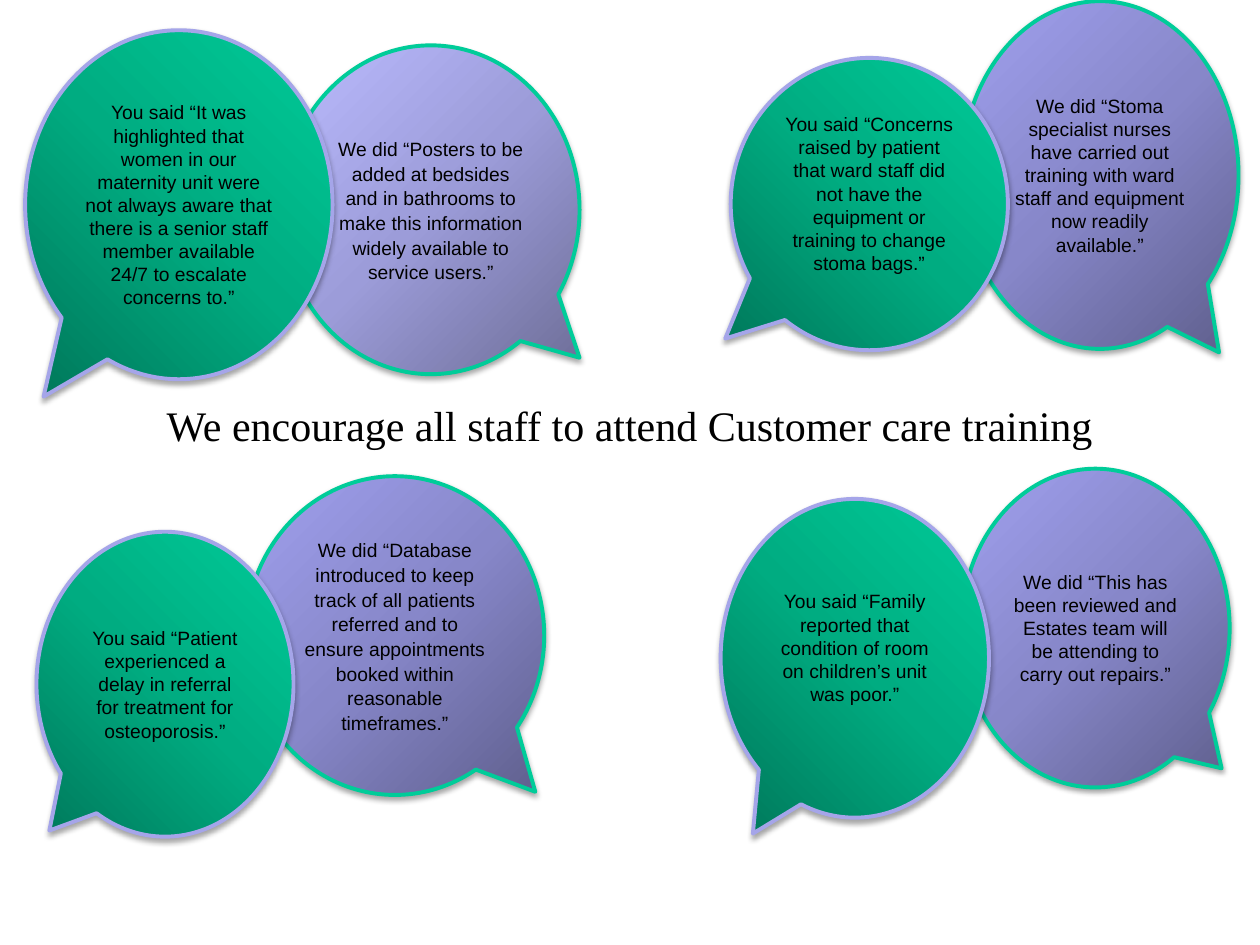
from dataclasses import dataclass

from pptx import Presentation
from pptx.dml.color import RGBColor
from pptx.enum import shapes, text
from pptx.oxml import parse_xml
from pptx.oxml.ns import nsdecls
from pptx.util import Inches, Pt

BLACK = RGBColor(0x00, 0x00, 0x00)
GREEN = RGBColor(0x00, 0xCC, 0x99)
LILAC = RGBColor(0xA5, 0xA5, 0xE9)


@dataclass(frozen=True)
class Style:
    shades: tuple[RGBColor, RGBColor, RGBColor]  # from the dark corner outwards
    dark_corner: str
    outline: RGBColor


@dataclass(frozen=True)
class Bubble:
    style: Style
    box: tuple[float, float, float, float]
    tail: tuple[float, float]
    words: str
    loose: bool = False  # wider line spacing
    raised: bool = False  # words sit half a line above the middle


def shades(*codes: str) -> tuple[RGBColor, ...]:
    return tuple(RGBColor.from_string(code) for code in codes)


RIGHT_CORNER = 'l="100000" t="100000"'
LEFT_CORNER = 't="100000" r="100000"'
YOU_SAID = Style(shades("00795B", "00AC81", "00CC99"), LEFT_CORNER, LILAC)
WE_DID = Style(shades("5F5F8D", "8787C9", "A0A0EE"), RIGHT_CORNER, GREEN)
WE_DID_LIGHT = Style(shades("6E6E98", "9C9CD9", "BBBBFF"), RIGHT_CORNER, GREEN)

BUBBLES = [
    Bubble(WE_DID, (7.63, 3.72, 2.13, 2.53), (0.47, 0.44),
           "We did “This has been reviewed and Estates team will be attending "
           "to carry out repairs.”"),
    Bubble(WE_DID, (1.95, 3.78, 2.37, 2.53), (0.47, 0.49),
           "We did “Database introduced to keep track of all patients referred "
           "and to ensure appointments booked within reasonable timeframes.”",
           loose=True),
    Bubble(YOU_SAID, (0.29, 4.22, 2.04, 2.42), (-0.45, 0.48),
           "You said “Patient experienced a delay in referral for treatment "
           "for osteoporosis.”"),
    Bubble(WE_DID_LIGHT, (2.24, 0.36, 2.36, 2.61), (0.5, 0.45),
           "We did “Posters to be added at bedsides and in bathrooms to make "
           "this information widely available to service users.”", loose=True),
    Bubble(WE_DID, (7.63, 0.01, 2.2, 2.76), (0.43, 0.51),
           "We did “Stoma specialist nurses have carried out training with "
           "ward staff and equipment now readily available.”"),
    Bubble(YOU_SAID, (5.72, 3.96, 2.13, 2.53), (-0.38, 0.55),
           "You said “Family reported that condition of room on children’s "
           "unit was poor.”", raised=True),
    Bubble(YOU_SAID, (5.8, 0.46, 2.2, 2.32), (-0.52, 0.46),
           "You said “Concerns raised by patient that ward staff did not have "
           "the equipment or training to change stoma bags.”", raised=True),
    Bubble(YOU_SAID, (0.2, 0.24, 2.44, 2.77), (-0.44, 0.55),
           "You said “It was highlighted that women in our maternity unit were "
           "not always aware that there is a senior staff member available "
           "24/7 to escalate concerns to.”"),
]


def write(frame, words: str, font_name: str, size: float):
    """Put one centred black paragraph in the frame and return it."""
    frame.text = words
    frame.word_wrap = True
    frame.vertical_anchor = text.MSO_ANCHOR.MIDDLE
    paragraph = frame.paragraphs[0]
    paragraph.alignment = text.PP_ALIGN.CENTER
    font = paragraph.runs[0].font
    font.name, font.size = font_name, Pt(size)
    font.color.rgb = BLACK
    return paragraph


def paint(shape, style: Style) -> None:
    """Give the shape its corner gradient, outline and soft shadow."""
    stops = "".join(
        f'<a:gs pos="{i * 50000}"><a:srgbClr val="{shade}"/></a:gs>'
        for i, shade in enumerate(style.shades))
    properties = shape._element.spPr
    properties.append(parse_xml(
        f'<a:gradFill {nsdecls("a")} rotWithShape="1"><a:gsLst>{stops}</a:gsLst>'
        f'<a:path path="circle"><a:fillToRect {style.dark_corner}/></a:path>'
        '</a:gradFill>'))
    shape.line.color.rgb = style.outline
    shape.line.width = Pt(2.25)
    properties.append(parse_xml(
        f'<a:effectLst {nsdecls("a")}><a:outerShdw blurRad="{Pt(3.1)}" '
        f'dist="{Pt(1.8)}" dir="5400000" rotWithShape="0">'
        '<a:srgbClr val="000000"><a:alpha val="35000"/></a:srgbClr>'
        '</a:outerShdw></a:effectLst>'))


def draw_bubble(slide, bubble: Bubble) -> None:
    callout = slide.shapes.add_shape(
        shapes.MSO_SHAPE.OVAL_CALLOUT, *map(Inches, bubble.box))
    for i, offset in enumerate(bubble.tail):
        callout.adjustments[i] = offset
    paint(callout, bubble.style)
    paragraph = write(callout.text_frame, bubble.words, "Arial", 11)
    if bubble.loose:
        paragraph.line_spacing = 1.07
        paragraph.space_after = Pt(8)
    if bubble.raised:
        callout.text_frame.margin_bottom = Inches(0.22)


def main() -> None:
    deck = Presentation()
    deck.slide_width, deck.slide_height = Inches(10), Inches(7.5)
    slide = deck.slides.add_slide(deck.slide_layouts.get_by_name("Title Only"))

    title = slide.shapes.title
    title.left, title.top = Inches(0.75), Inches(3.12)
    title.width, title.height = Inches(8.5), Inches(0.5)
    write(title.text_frame, "We encourage all staff to attend Customer care training",
          "Times New Roman", 24)

    for bubble in BUBBLES:
        draw_bubble(slide, bubble)
    deck.save("out.pptx")


if __name__ == "__main__":
    main()
